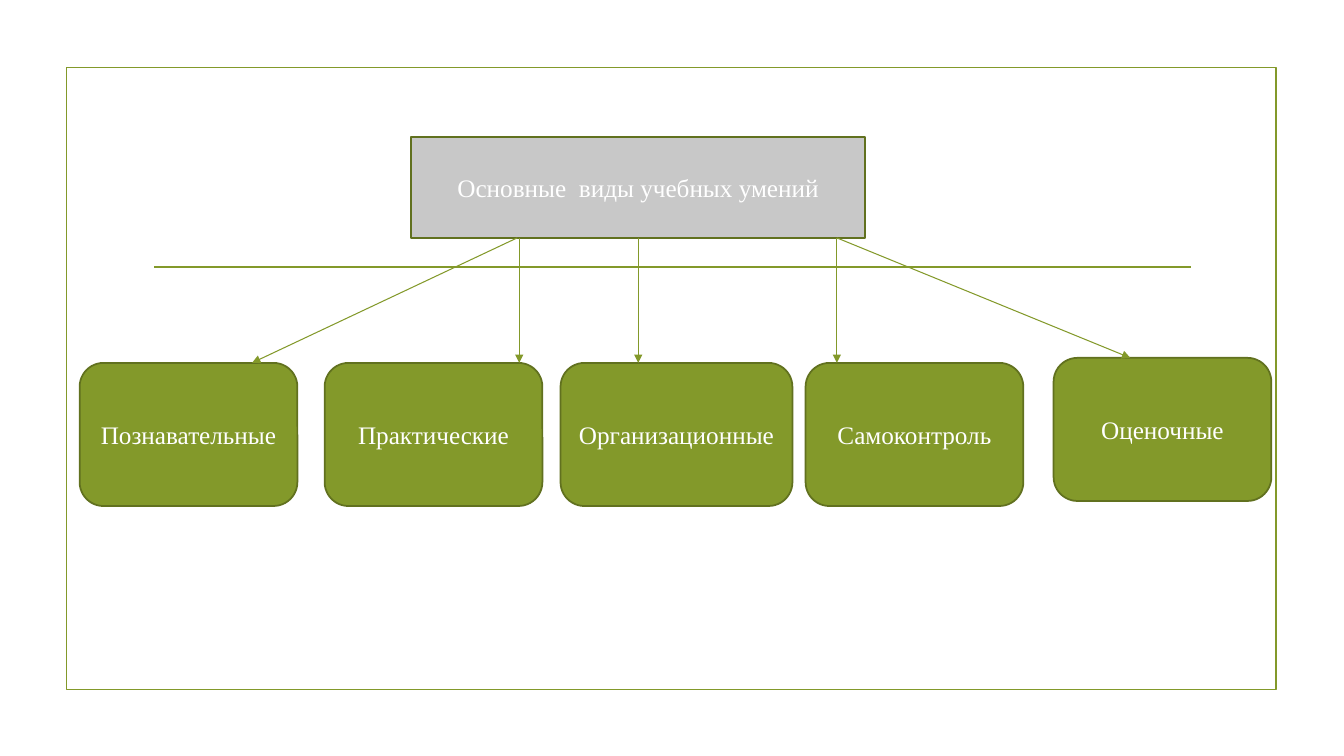
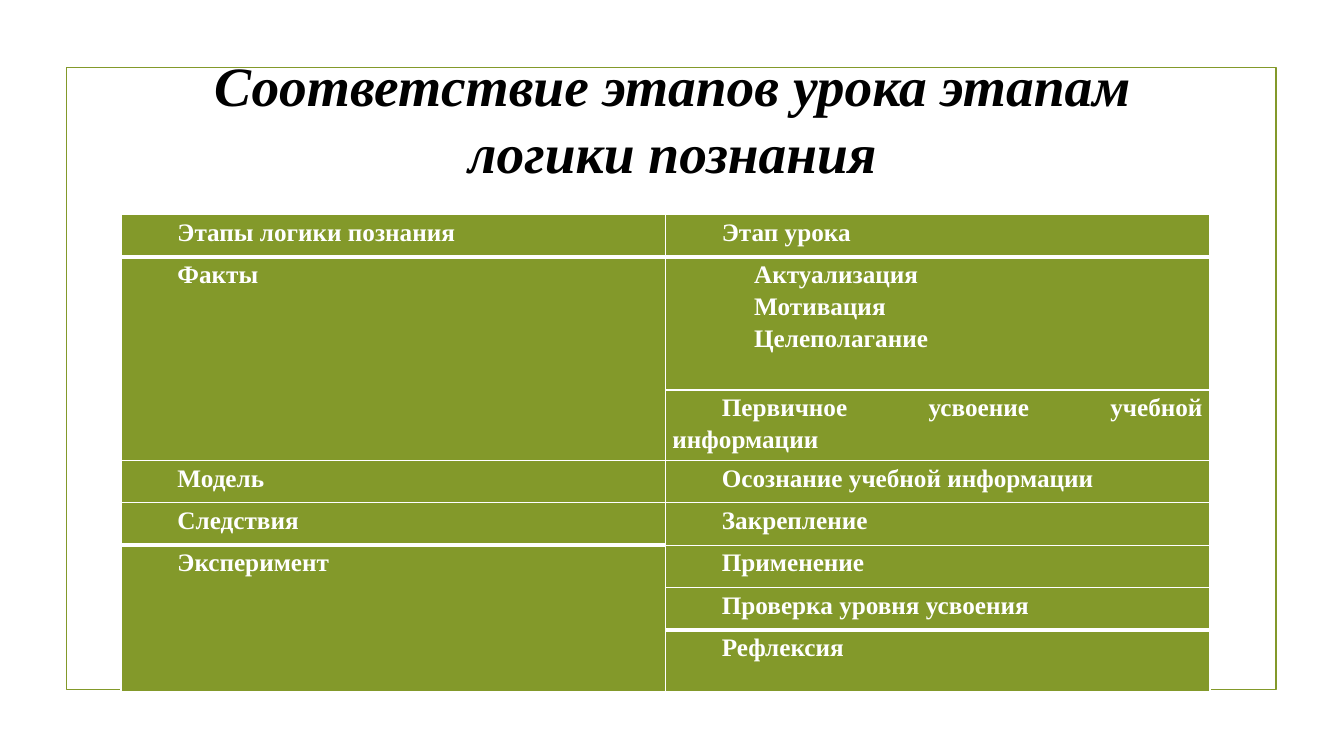
from lxml import etree
from pptx import Presentation, util as u
from pptx.dml.color import RGBColor
from pptx.enum import shapes, text
from pptx.oxml import ns

HUES = {"green": "83992A", "edge": "61711F", "gray": "C8C8C8",
        "white": "FFFFFF", "black": "000000"}
FONT = "Times New Roman"
KINDS = shapes.MSO_SHAPE
ALIGN = text.PP_ALIGN


def hue(name):
    """Return the named colour."""
    return RGBColor.from_string(HUES[name])


def write(frame, words, size=18, color="white", bold=False, italic=False,
          align=ALIGN.CENTER, space=None, left=0, indent=0):
    """Fill a text frame with one paragraph per line of words."""
    frame.word_wrap = True
    for i, line in enumerate(words.split("\n")):
        para = frame.paragraphs[0] if i == 0 else frame.add_paragraph()
        para.alignment = align
        if space:
            para.line_spacing = space
        if left or indent:
            props = para._p.get_or_add_pPr()
            props.set("marL", str(u.Inches(left)))
            props.set("indent", str(u.Inches(indent)))
        run = para.add_run()
        run.text = line
        font = run.font
        font.name, font.size = FONT, u.Pt(size)
        font.bold, font.italic = bold, italic
        font.color.rgb = hue(color)


def add_box(slide, kind, spot, fill=None, edge="edge", words=None):
    """Add an outlined shape, with fill and centred words if given."""
    box = slide.shapes.add_shape(kind, *map(u.Inches, spot))
    box.shadow.inherit = False
    box.line.color.rgb, box.line.width = hue(edge), u.Pt(1.25)
    if fill:
        box.fill.solid()
        box.fill.fore_color.rgb = hue(fill)
    else:
        box.fill.background()
    if words:
        box.text_frame.vertical_anchor = text.MSO_ANCHOR.MIDDLE
        write(box.text_frame, words)
    return box


def add_line(slide, start, end, width=0.75, arrow=True):
    """Add a straight green line, with an arrowhead at its end by default."""
    line = slide.shapes.add_connector(
        shapes.MSO_CONNECTOR.STRAIGHT, *map(u.Inches, start + end))
    line.line.color.rgb, line.line.width = hue("green"), u.Pt(width)
    if arrow:
        etree.SubElement(line.line._get_or_add_ln(), ns.qn("a:tailEnd"),
                         type="triangle")
    etree.SubElement(line._element.spPr, ns.qn("a:effectLst"))
    return line


def set_base(slide, layout):
    """Put the shared frame and rule on the layout."""
    parts = [
        add_box(slide, KINDS.RECTANGLE, (0.66, 0.67, 12, 6.17), edge="green"),
        add_line(slide, (1.53, 2.65), (11.81, 2.65), 1.25, arrow=False)]
    for part in parts:
        layout.shapes.element.append(part.element)


def draw_skills(slide):
    """Draw the tree of study skills."""
    root = add_box(slide, KINDS.RECTANGLE, (4.08, 1.36, 4.5, 1), "gray",
                   words="Основные  виды учебных умений")
    skills = [("Познавательные", 0.79, 3.6, 2.16, 5.13, 2.5),
              ("Практические", 3.22, 3.6, 2.16, 5.15, 5.15),
              ("Организационные", 5.56, 3.6, 2.3, 6.33, 6.33),
              ("Самоконтроль", 7.99, 3.6, 2.16, 8.3, 8.3),
              ("Оценочные", 10.45, 3.55, 2.16, 8.3, 11.21)]
    for name, left, top, width, start, end in skills:
        add_box(slide, KINDS.ROUNDED_RECTANGLE, (left, top, width, 1.42),
                "green", words=name)
        arrow = add_line(slide, (start, 2.36), (end, top))
        if start == 6.33:
            arrow.begin_connect(root, 2)


def set_cell(cell, words, top, base, left):
    """Style a table cell and write its words."""
    cell.margin_left = cell.margin_right = u.Inches(0.07)
    cell.margin_top = cell.margin_bottom = 0
    props = cell._tc.get_or_add_tcPr()
    for side, width in (("L", 1), ("R", 1), ("T", top), ("B", base)):
        line = etree.SubElement(props, ns.qn("a:ln" + side),
                                w=str(u.Pt(width)))
        fill = etree.SubElement(line, ns.qn("a:solidFill"))
        etree.SubElement(fill, ns.qn("a:srgbClr"), val=HUES["white"])
    cell.fill.solid()
    cell.fill.fore_color.rgb = hue("green")
    if words:
        write(cell.text_frame, words, bold=True, align=ALIGN.JUSTIFY,
              space=1.15, left=left, indent=0.49)


def draw_stages(slide):
    """Draw the title and the table of lesson stages."""
    title = slide.shapes.add_textbox(*map(u.Inches, (1.42, 0.47, 10.5, 1.4)))
    title.text_frame.vertical_anchor = text.MSO_ANCHOR.MIDDLE
    write(title.text_frame, "Соответствие этапов урока этапам логики познания",
          size=39.6, color="black", bold=True, italic=True)

    rows = [("Этапы логики познания", "Этап урока", 0.42),
            ("Факты", "Актуализация\nМотивация\nЦелеполагание", 1.32),
            ("", "Первичное усвоение учебной информации", 0.7),
            ("Модель", "Осознание учебной информации", 0.42),
            ("Следствия", "Закрепление", 0.42),
            ("Эксперимент", "Применение", 0.42),
            ("", "Проверка уровня усвоения", 0.42),
            ("", "Рефлексия", 0.61)]
    thick = {(1, 0), (1, 1), (5, 0), (7, 1)}
    table = slide.shapes.add_table(
        len(rows), 2, *map(u.Inches, (1.2, 2.13, 10.8, 4.73))).table
    table.first_row = table.horz_banding = False
    for col in table.columns:
        col.width = u.Inches(5.4)
    for r, (*words, height) in enumerate(rows):
        table.rows[r].height = u.Inches(height)
        for c, word in enumerate(words):
            top, base = (3 if (n, c) in thick else 1 for n in (r, r + 1))
            set_cell(table.cell(r, c), word, top, base,
                     0.32 if "\n" in word else 0)
    for first, last in ((1, 2), (5, 7)):
        table.cell(first, 0).merge(table.cell(last, 0))


def main():
    """Build and save the slides."""
    prs = Presentation()
    prs.slide_width, prs.slide_height = u.Inches(13.33), u.Inches(7.5)
    blank = prs.slide_layouts[6]
    skills, stages = (prs.slides.add_slide(blank) for _ in range(2))
    set_base(skills, blank)
    draw_skills(skills)
    draw_stages(stages)
    prs.save("out.pptx")


if __name__ == "__main__":
    main()
